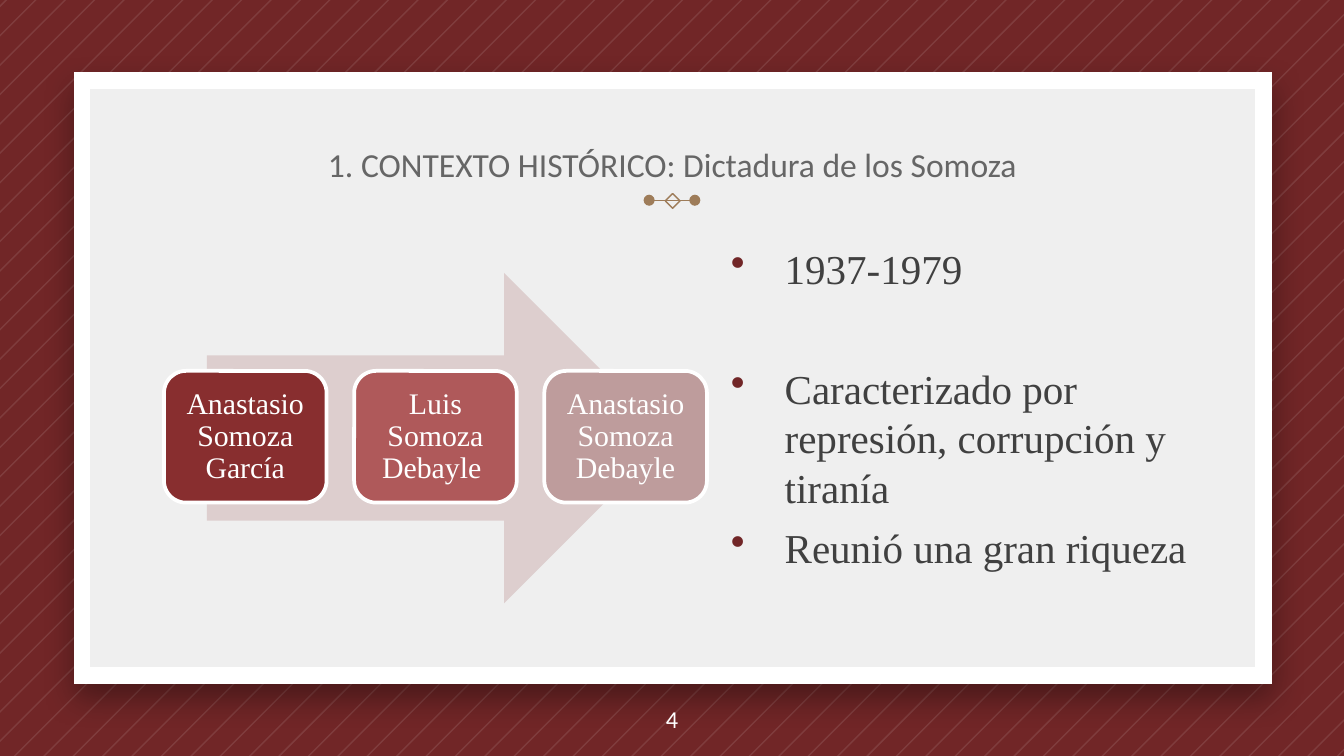
"""Build the slide on the Somoza dictatorship with its arrow of three rulers."""
from dataclasses import dataclass

from lxml import etree
from pptx import Presentation
from pptx.dml.color import RGBColor
from pptx.enum.shapes import MSO_CONNECTOR, MSO_SHAPE
from pptx.enum.text import MSO_ANCHOR, PP_ALIGN
from pptx.oxml import parse_xml
from pptx.oxml.ns import nsdecls, qn
from pptx.util import Inches, Pt

RECTANGLE, DIAMOND = MSO_SHAPE.RECTANGLE, MSO_SHAPE.DIAMOND
ARROW, ROUNDED = MSO_SHAPE.RIGHT_ARROW, MSO_SHAPE.ROUNDED_RECTANGLE
STRAIGHT = MSO_CONNECTOR.STRAIGHT
LEFT, CENTER = PP_ALIGN.LEFT, PP_ALIGN.CENTER
TOP, MIDDLE, BOTTOM = MSO_ANCHOR.TOP, MSO_ANCHOR.MIDDLE, MSO_ANCHOR.BOTTOM


@dataclass(frozen=True)
class Theme:
    wine: str = "712627"
    white: str = "FFFFFF"
    paper: str = "EFEFEF"
    gold: str = "9E7C59"
    heading: str = "666666"
    body: str = "404040"
    arrow: str = "DDCECE"
    rulers: tuple = ("882E2F", "AF595A", "BE9C9C")
    sans: str = "Calibri"
    serif: str = "Times New Roman"
    title_size: int = 18
    body_size: int = 22
    ruler_size: int = 16
    number_size: int = 13


THEME = Theme()
WIDTH = 10
HEIGHT = WIDTH * 9 / 16

deck = Presentation()
deck.slide_width, deck.slide_height = Inches(WIDTH), Inches(HEIGHT)
slide = deck.slides.add_slide(deck.slide_layouts[6])
slide.background.fill.solid()
slide.background.fill.fore_color.rgb = RGBColor.from_string(THEME.wine)


def add_block(kind, box, fill=None, line=None, weight=0.75):
    block = slide.shapes.add_shape(kind, *map(Inches, box))
    block.shadow.inherit = False
    if fill:
        block.fill.solid()
        block.fill.fore_color.rgb = RGBColor.from_string(fill)
    else:
        block.fill.background()
    if line:
        block.line.color.rgb = RGBColor.from_string(line)
        block.line.width = Pt(weight)
    else:
        block.line.fill.background()
    return block


def write_text(shape, text, size, color, font=THEME.serif, align=CENTER,
               anchor=MIDDLE, inset=0.1, spacing=1.0, before=0, first=True):
    frame = shape.text_frame
    frame.word_wrap = True
    frame.vertical_anchor = anchor
    frame.margin_left = frame.margin_right = Inches(inset)
    frame.margin_top = frame.margin_bottom = Inches(inset)
    paragraph = frame.paragraphs[0] if first else frame.add_paragraph()
    paragraph.alignment = align
    paragraph.line_spacing = spacing
    paragraph.space_before = Pt(before)
    run = paragraph.add_run()
    run.text = text
    run.font.size = Pt(size)
    run.font.name = font
    run.font.color.rgb = RGBColor.from_string(color)
    return paragraph


STRIPE_PITCH, STRIPE_WIDTH, STRIPE_COUNT = 7 / 32, 0.015, 72
builder = slide.shapes.build_freeform(0, 0)
for index in range(STRIPE_COUNT):
    near = 0.04 + index * STRIPE_PITCH
    far = near + STRIPE_WIDTH
    corners = [(min(near, WIDTH), max(near - WIDTH, 0)),
               (max(near - HEIGHT, 0), min(near, HEIGHT)),
               (max(far - HEIGHT, 0), min(far, HEIGHT)),
               (min(far, WIDTH), max(far - WIDTH, 0))]
    corners = [(Inches(x), Inches(y)) for x, y in corners]
    builder.move_to(*corners[0])
    builder.add_line_segments(corners[1:], close=True)
stripes = builder.convert_to_shape()
stripes.shadow.inherit = False
stripes.line.fill.background()
stripes.fill.solid()
stripes.fill.fore_color.rgb = RGBColor.from_string(THEME.white)
stripe_color = stripes._element.spPr.find(f"{qn('a:solidFill')}/{qn('a:srgbClr')}")
etree.SubElement(stripe_color, qn("a:alpha"), val="10000")

panel = add_block(RECTANGLE, (0.61, 0.6, 8.79, 4.43), THEME.paper, THEME.white, 9)
etree.SubElement(panel.line._get_or_add_ln(), qn("a:miter"), lim="800000")
panel_effects = panel._element.spPr.find(qn("a:effectLst"))
panel_effects.append(parse_xml(
    f'<a:outerShdw {nsdecls("a")} blurRad="{Pt(16.9)}" dist="{Pt(7.5)}" '
    'dir="5400000" algn="t" rotWithShape="0"><a:srgbClr val="000000">'
    '<a:alpha val="35000"/></a:srgbClr></a:outerShdw>'))

ornament = slide.shapes.add_connector(
    STRAIGHT, Inches(4.83), Inches(1.49), Inches(5.17), Inches(1.49))
ornament.line.color.rgb = RGBColor.from_string(THEME.gold)
ornament.line.width = Pt(0.75)
for end in ("a:headEnd", "a:tailEnd"):
    etree.SubElement(ornament.line._get_or_add_ln(), qn(end), type="oval")
etree.SubElement(ornament._element.spPr, qn("a:effectLst"))
add_block(DIAMOND, (4.95, 1.44, 0.11, 0.11), line=THEME.gold)

title = slide.shapes.add_textbox(*map(Inches, (0.99, 0.81, 8.03, 0.66)))
write_text(title, "1. CONTEXTO HISTÓRICO: Dictadura de los Somoza",
           THEME.title_size, THEME.heading, font=THEME.sans, anchor=BOTTOM)

facts = slide.shapes.add_textbox(*map(Inches, (5.24, 1.71, 3.78, 2.89)))
for index, (fact, gap) in enumerate([
        ("1937-1979", 0),
        ("Caracterizado por represión, corrupción y tiranía", 38),
        ("Reunió una gran riqueza", 6)]):
    paragraph = write_text(facts, fact, THEME.body_size, THEME.body, align=LEFT,
                           anchor=TOP, before=gap, first=index == 0)
    properties = paragraph._p.get_or_add_pPr()
    properties.set("marL", str(Inches(0.5)))
    properties.set("indent", str(Inches(-0.4)))
    bullet_color = etree.SubElement(properties, qn("a:buClr"))
    etree.SubElement(bullet_color, qn("a:srgbClr"), val=THEME.wine)
    etree.SubElement(properties, qn("a:buChar"), char="•")

page_number = slide.shapes.add_textbox(*map(Inches, (0, 5.08, WIDTH, 0.54)))
write_text(page_number, "4", THEME.number_size, THEME.white, font=THEME.sans)

add_block(ARROW, (1.54, 2.03, 3.44, 2.46), THEME.arrow)
RULERS = ("Anastasio Somoza García", "Luis Somoza Debayle ", "Anastasio Somoza Debayle")
CARD_PITCH = 2.83 / 2
for index, (ruler, shade) in enumerate(zip(RULERS, THEME.rulers)):
    card = add_block(ROUNDED, (1.22 + index * CARD_PITCH, 2.76, 1.21, 0.98),
                     shade, THEME.white, 2)
    write_text(card, ruler, THEME.ruler_size, THEME.white, inset=0.07, spacing=0.9)

deck.save("out.pptx")
